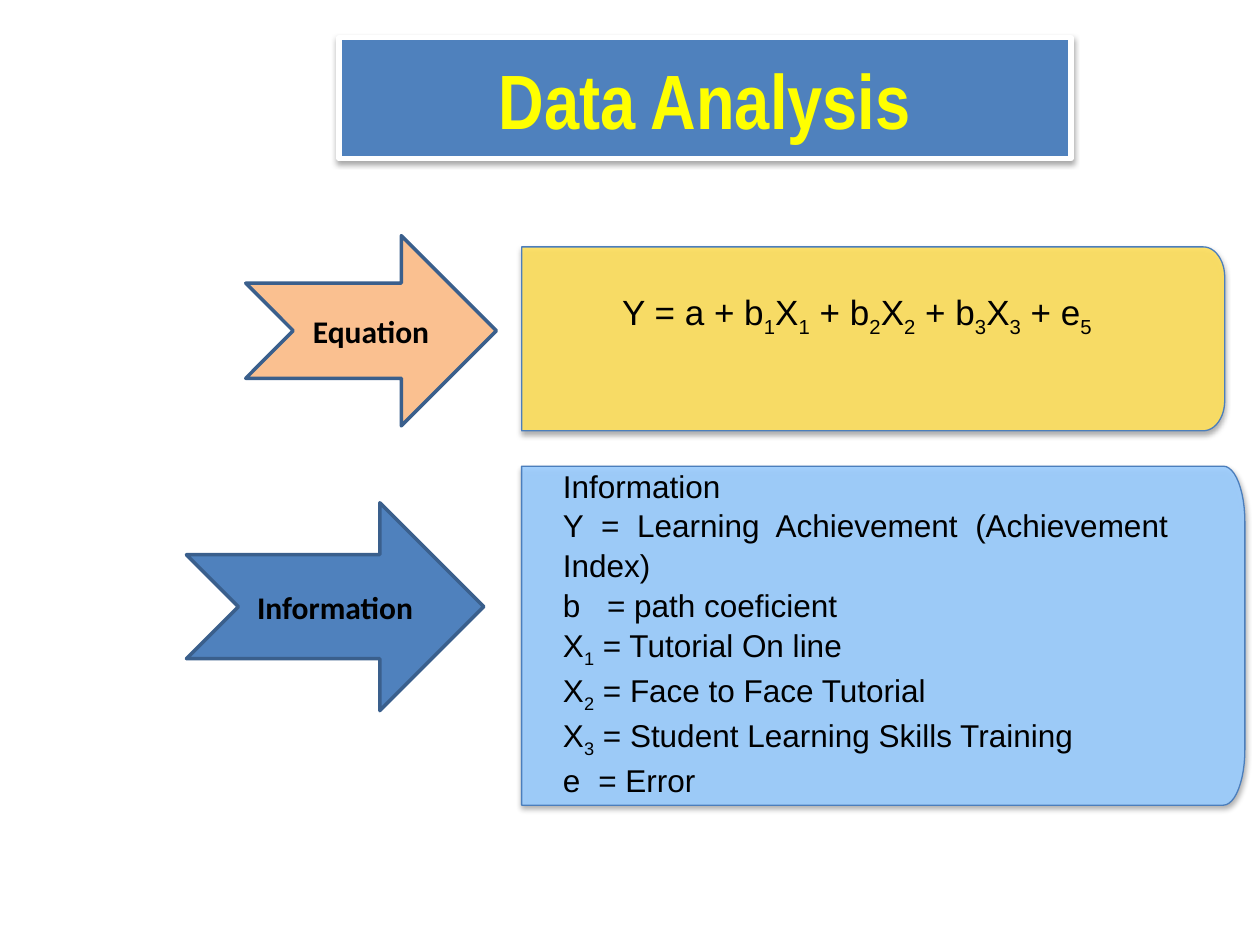
import math
from dataclasses import dataclass

from pptx import Presentation
from pptx.dml.color import RGBColor
from pptx.enum.shapes import MSO_SHAPE
from pptx.enum.text import MSO_ANCHOR, PP_ALIGN
from pptx.oxml import parse_xml
from pptx.oxml.ns import nsdecls, qn
from pptx.util import Inches, Pt

RECT = MSO_SHAPE.RECTANGLE
ARROW = MSO_SHAPE.NOTCHED_RIGHT_ARROW
MIDDLE, TOP = MSO_ANCHOR.MIDDLE, MSO_ANCHOR.TOP
LEFT, CENTER, JUSTIFY = PP_ALIGN.LEFT, PP_ALIGN.CENTER, PP_ALIGN.JUSTIFY


@dataclass(frozen=True)
class Theme:
    blue: str = "4F81BD"
    orange: str = "FAC090"
    yellow_panel: str = "FFE05D"
    blue_panel: str = "9BCDFF"
    arrow_line: str = "3A5F8C"
    panel_line: str = "4B7EBC"
    white: str = "FFFFFF"
    black: str = "000000"
    title_text: str = "FFFF00"
    title_size: int = 44
    equation_size: int = 20
    body_size: int = 18
    title_font: str = "Arial Narrow"
    label_font: str = "Calibri"
    body_font: str = "Arial"


T = Theme()


def paint(sp, fill, line, width):
    sp.shadow.inherit = False
    sp.fill.solid()
    sp.fill.fore_color.rgb = RGBColor.from_string(fill)
    sp.line.color.rgb = RGBColor.from_string(line)
    sp.line.width = Pt(width)


def add_shadow(sp):
    effects = sp._element.spPr.find(qn("a:effectLst"))
    effects.append(parse_xml(
        f'<a:outerShdw {nsdecls("a")} blurRad="40000" dist="23000" dir="5400000" '
        'rotWithShape="0"><a:srgbClr val="000000"><a:alpha val="35000"/>'
        '</a:srgbClr></a:outerShdw>'))


def write(p, text, *, font, size, color=T.black, bold=False, align=LEFT,
          spacing=None, tab=None):
    """Write a paragraph; a digit after an underscore is a subscript."""
    p.alignment = align
    if spacing:
        p.line_spacing = spacing
    if tab:
        p._p.get_or_add_pPr().append(parse_xml(
            f'<a:tabLst {nsdecls("a")}><a:tab pos="{Inches(tab)}" algn="l"/></a:tabLst>'))
    first, *rest = text.split("_")
    parts = [(first, False)]
    for part in rest:
        parts += [(part[0], True), (part[1:], False)]
    for words, subscript in parts:
        if not words:
            continue
        r = p.add_run()
        r.text = words
        r.font.name, r.font.size, r.font.bold = font, Pt(size), bold
        r.font.color.rgb = RGBColor.from_string(color)
        if subscript:
            r._r.get_or_add_rPr().set("baseline", "-25000")


def add_label(s, kind, box, text, fill, line, width, **style):
    sp = s.shapes.add_shape(kind, *map(Inches, box))
    paint(sp, fill, line, width)
    sp.text_frame.vertical_anchor = MIDDLE
    write(sp.text_frame.paragraphs[0], text, align=CENTER, bold=True, **style)
    return sp


def add_panel(s, box, radius_y, fill, radius_x=0.17, steps=12):
    """Draw a box whose two right corners are elliptical."""
    x, y, w, h = box
    right, bottom = x + w, y + h
    angles = [math.pi / 2 * i / steps for i in range(steps + 1)]
    curve = [(right - radius_x * (1 - math.sin(a)), radius_y * (1 - math.cos(a)))
             for a in angles]
    points = [(px, y + dy) for px, dy in curve]
    points += [(px, bottom - dy) for px, dy in reversed(curve)]
    points.append((x, bottom))
    builder = s.shapes.build_freeform(Inches(x), Inches(y))
    builder.add_line_segments([(Inches(px), Inches(py)) for px, py in points])
    sp = builder.convert_to_shape()
    paint(sp, fill, T.panel_line, 0.75)
    color = sp._element.spPr.find(qn("a:solidFill"))[0]
    color.append(parse_xml(f'<a:alpha {nsdecls("a")} val="90000"/>'))
    add_shadow(sp)


def add_text(s, box, lines, **style):
    tf = s.shapes.add_textbox(*map(Inches, box)).text_frame
    tf.word_wrap = True
    tf.vertical_anchor = TOP
    for i, (text, tab) in enumerate(lines):
        p = tf.add_paragraph() if i else tf.paragraphs[0]
        write(p, text, tab=tab, font=T.body_font, **style)


def main():
    prs = Presentation()
    prs.slide_width, prs.slide_height = Inches(10), Inches(7.5)
    s = prs.slides.add_slide(prs.slide_layouts[6])

    # Title
    title = add_label(s, RECT, (2.69, 0.3, 5.81, 0.96), "Data Analysis", T.blue,
                      T.white, 3, font=T.title_font, size=T.title_size,
                      color=T.title_text)
    add_shadow(title)

    # Panels
    add_panel(s, (4.14, 1.96, 5.58, 1.46), 0.24, T.yellow_panel)
    add_panel(s, (4.14, 3.7, 5.74, 2.69), 0.44, T.blue_panel)

    # Arrows
    for text, box, fill in (("Equation", (1.95, 1.87, 1.99, 1.51), T.orange),
                            ("Information", (1.48, 3.99, 2.36, 1.65), T.blue)):
        add_label(s, ARROW, box, text, fill, T.arrow_line, 2,
                  font=T.label_font, size=T.body_size)

    # Equation and its legend
    add_text(s, (4.84, 2.26, 4.04, 0.44),
             [("Y = a + b_1X_1 + b_2X_2 + b_3X_3 + e_5", None)],
             size=T.equation_size)
    legend = [
        ("Information", None),
        ("Y = Learning Achievement (Achievement Index)", None),
        ("b\t= path coeficient", 0.35),
        ("X_1 = Tutorial On line", None),
        ("X_2 = Face to Face Tutorial", None),
        ("X_3 = Student Learning Skills Training", None),
        ("e\t= Error", 0.28),
    ]
    add_text(s, (4.37, 3.64, 5, 2.75), legend, size=T.body_size,
             align=JUSTIFY, spacing=1.05)

    prs.save("out.pptx")


if __name__ == "__main__":
    main()
